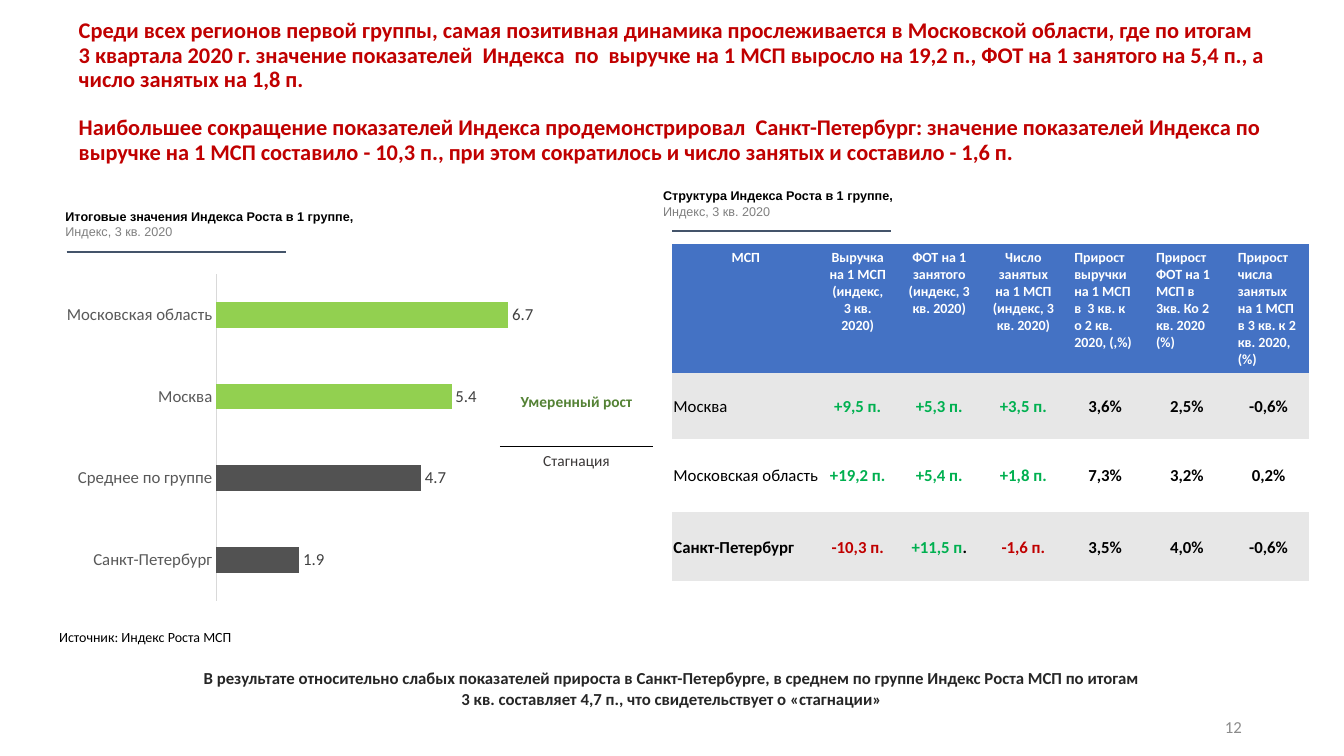
"""Build the slide on the Growth Index of the first group of regions."""
from dataclasses import dataclass
from lxml.etree import SubElement
from pptx import Presentation
from pptx.chart.data import CategoryChartData
from pptx.dml.color import RGBColor
from pptx.enum.chart import XL_CHART_TYPE, XL_LABEL_POSITION, XL_TICK_MARK
from pptx.enum.shapes import MSO_CONNECTOR
from pptx.enum.text import MSO_ANCHOR, PP_ALIGN
from pptx.oxml.ns import qn
from pptx.util import Cm, Pt

TITLE = [
    "Среди всех регионов первой группы, самая позитивная динамика прослеживается в Московской области, где по итогам 3 квартала 2020 г. значение показателей  Индекса  по  выручке на 1 МСП выросло на 19,2 п., ФОТ на 1 занятого на 5,4 п., а число занятых на 1,8 п.",
    "Наибольшее сокращение показателей Индекса продемонстрировал  Санкт-Петербург: значение показателей Индекса по выручке на 1 МСП составило - 10,3 п., при этом сократилось и число занятых и составило - 1,6 п.",
]
PERIOD = "Индекс, 3 кв. 2020"
HEADS = [
    ("Итоговые значения Индекса Роста в 1 группе,", (1.4, 5.13), (1.68, 6.35)),
    ("Структура Индекса Роста в 1 группе,", (16.46, 4.62), (16.94, 5.82)),
]
SCORES = {"Санкт-Петербург": 1.9, "Среднее по группе": 4.7,
          "Москва": 5.4, "Московская область": 6.7}
LEVELS = [("Умеренный рост", "rise"), ("Стагнация", "flat")]
COLUMNS = [
    "МСП", "Выручка на 1 МСП (индекс, 3 кв. 2020)",
    "ФОТ на 1 занятого (индекс, 3 кв. 2020)",
    "Число занятых на 1 МСП (индекс, 3 кв. 2020)",
    "Прирост  выручки на 1 МСП в  3 кв. к о 2 кв. 2020, (,%)",
    "Прирост  ФОТ на 1 МСП в 3кв. Ко 2 кв. 2020 (%)",
    "Прирост числа занятых на 1 МСП в 3 кв. к 2 кв. 2020, (%)",
]
REGIONS = [
    ("Москва", "+9,5 п.", "+5,3 п.", "+3,5 п.", "3,6%", "2,5%", "-0,6%"),
    ("Московская область", "+19,2 п.", "+5,4 п.", "+1,8 п.", "7,3%", "3,2%", "0,2%"),
    ("Санкт-Петербург", "-10,3 п.", "+11,5 п.", "-1,6 п.", "3,5%", "4,0%", "-0,6%"),
]
SOURCE = "Источник: Индекс Роста МСП"
RESULT = "В результате относительно слабых показателей прироста в Санкт-Петербурге, в среднем по группе Индекс Роста МСП по итогам 3 кв. составляет 4,7 п., что свидетельствует о «стагнации»"
PLAIN = "{2D5ABB26-0587-4C30-8999-92F81FD0307C}"
LEFT, MID, RIGHT = PP_ALIGN.LEFT, PP_ALIGN.CENTER, PP_ALIGN.RIGHT


@dataclass(frozen=True)
class Theme:
    """Colours and type styles (font, size, colour, bold)."""
    title = ("Calibri", 16, "C00000", True)
    head = ("Arial", 9, "000000", True)
    period = ("Arial", 9, "7F7F7F", False)
    label = ("Calibri", 12, "404040", False)
    axis = ("Calibri", 12, "595959", False)
    rise = ("Calibri", 11, "548235", True)
    flat = ("Calibri", 11, "3B3838", False)
    column = ("Calibri", 10, "FFFFFF", True)
    region = ("Calibri", 12, "000000", False)
    value = ("Calibri", 12, "000000", True)
    plus = ("Calibri", 12, "00B050", True)
    minus = ("Calibri", 12, "C00000", True)
    source = ("Calibri", 10, "000000", False)
    result = ("Calibri", 12, "262626", True)
    page = ("Calibri", 12, "8C8C8C", False)
    blue, band, white = "4472C4", "E7E7E7", "FFFFFF"
    rule, edge, axle = "44546A", "000000", "D9D9D9"
    high, low = "92D050", "525252"


LOOK = Theme()


def put(item, **vals):
    """Set each named value on an item."""
    for name, val in vals.items():
        setattr(item, name, val)


def paint(item, tone):
    """Give a shape, cell or bar a solid fill."""
    item.fill.solid()
    item.fill.fore_color.rgb = RGBColor.from_string(tone)


def style(font, look):
    """Apply a type style to a font."""
    name, size, tone, bold = look
    put(font, name=name, size=Pt(size), bold=bold)
    font.color.rgb = RGBColor.from_string(tone)


def write(frame, rows, align=LEFT, **form):
    """Fill a text frame, one paragraph for each list of runs."""
    frame.word_wrap = True
    for n, runs in enumerate(rows):
        para = frame.add_paragraph() if n else frame.paragraphs[0]
        put(para, alignment=align, **form)
        for text, look in runs:
            run = para.add_run()
            run.text = text
            style(run.font, look)


def add_text(slide, box, rows, align=LEFT, anchor=MSO_ANCHOR.TOP):
    """Add a text box."""
    frame = slide.shapes.add_textbox(*map(Cm, box)).text_frame
    frame.vertical_anchor = anchor
    write(frame, rows, align)


def add_rule(slide, x, y, span=5.52):
    """Add a thin rule below a heading."""
    rule = slide.shapes.add_connector(
        MSO_CONNECTOR.STRAIGHT, Cm(x), Cm(y), Cm(x + span), Cm(y))
    rule.line.color.rgb = RGBColor.from_string(LOOK.rule)
    rule.line.width = Pt(1)
    SubElement(rule._element.spPr, qn("a:effectLst"))


def add_grid(slide, x, y, cols, rows):
    """Add a table without style, sized by its columns and rows."""
    frame = slide.shapes.add_table(
        len(rows), len(cols), Cm(x), Cm(y), Cm(sum(cols)), Cm(sum(rows)))
    grid = frame.table
    put(grid, first_row=False, horz_banding=False)
    grid._tbl.tblPr.find(qn("a:tableStyleId")).text = PLAIN
    for col, wide in zip(grid.columns, cols):
        col.width = Cm(wide)
    for row, tall in zip(grid.rows, rows):
        row.height = Cm(tall)
    return grid


def add_bars(slide):
    """Add the bar chart of index scores."""
    data = CategoryChartData(number_format="0.0")
    data.categories = list(SCORES)
    data.add_series("Series 1", list(SCORES.values()))
    box = map(Cm, (1.4, 5.13, 13.51, 12.67))
    chart = slide.shapes.add_chart(XL_CHART_TYPE.BAR_CLUSTERED, *box, data).chart
    put(chart, has_legend=False, has_title=False)
    style(chart.font, LOOK.label)
    plot = chart.plots[0]
    put(plot, gap_width=219, vary_by_categories=False, has_data_labels=True)
    put(plot.data_labels, show_value=True, number_format="0.0",
        number_format_is_linked=False, position=XL_LABEL_POSITION.OUTSIDE_END)
    style(plot.data_labels.font, LOOK.label)
    for n, score in enumerate(SCORES.values()):
        paint(plot.series[0].points[n].format, LOOK.high if score > 5 else LOOK.low)
    put(chart.value_axis, visible=False, has_major_gridlines=False,
        minimum_scale=0, maximum_scale=8)
    axis = chart.category_axis
    put(axis, major_tick_mark=XL_TICK_MARK.NONE, has_major_gridlines=False)
    style(axis.tick_labels.font, LOOK.axis)
    axis.format.line.color.rgb = RGBColor.from_string(LOOK.axle)
    axis.format.line.width = Pt(0.75)
    area = chart._chartSpace.chart.plotArea
    for old in area.findall(qn("c:layout")):
        area.remove(old)
    place = SubElement(area, qn("c:layout"))
    area.insert(0, place)
    inner = SubElement(place, qn("c:manualLayout"))
    for tag, val in {"layoutTarget": "inner", "xMode": "edge", "yMode": "edge",
                     "x": 0.3, "y": 0.14, "w": 0.65, "h": 0.65}.items():
        SubElement(inner, qn("c:" + tag)).set("val", str(val))


def add_levels(slide):
    """Add the scale that parts growth from stagnation."""
    grid = add_grid(slide, 12.6, 9.78, [3.86], [1.47, 1.24])
    for n, (text, look) in enumerate(LEVELS):
        cell = grid.cell(n, 0)
        paint(cell, LOOK.white)
        write(cell.text_frame, [[(text, getattr(LOOK, look))]], MID)
    props = grid.cell(0, 0)._tc.get_or_add_tcPr()
    edge = props.makeelement(qn("a:lnB"), {"w": str(Pt(1))})
    props.insert(0, edge)
    tone = SubElement(SubElement(edge, qn("a:solidFill")), qn("a:srgbClr"))
    tone.set("val", LOOK.edge)


def add_regions(slide):
    """Add the table of index parts by region."""
    grid = add_grid(slide, 16.94, 6.15, [3.71, 1.93, 2.18] + [2.06] * 4,
                    [3.23, 1.65, 1.85, 1.75])
    for c, text in enumerate(COLUMNS):
        cell = grid.cell(0, c)
        paint(cell, LOOK.blue)
        write(cell.text_frame, [[(text, LOOK.column)]], MID if c < 4 else LEFT)
    for r, row in enumerate(REGIONS, 1):
        for c, text in enumerate(row):
            cell = grid.cell(r, c)
            paint(cell, LOOK.band if r % 2 else LOOK.white)
            put(cell, vertical_anchor=MSO_ANCHOR.MIDDLE, margin_left=Cm(0.03),
                margin_right=Cm(0.03), margin_top=Cm(0.03), margin_bottom=0)
            look = LOOK.value
            if c == 0 and r < len(REGIONS):
                look = LOOK.region
            elif 0 < c < 4:
                look = LOOK.plus if text.startswith("+") else LOOK.minus
            runs = [(text, look)]
            if text == "+11,5 п.":
                runs = [(text[:-1], look), (".", LOOK.value)]
            write(cell.text_frame, [runs], MID if c else LEFT)


def main():
    """Assemble and save the slide."""
    deck = Presentation()
    put(deck, slide_width=Cm(33.87), slide_height=Cm(19.05))
    slide = deck.slides.add_slide(deck.slide_layouts[5])
    title = slide.shapes.title
    put(title, left=Cm(1.73), top=Cm(0.79), width=Cm(30.43), height=Cm(3.68))
    put(title.text_frame, vertical_anchor=MSO_ANCHOR.MIDDLE, margin_bottom=Cm(0.74))
    write(title.text_frame, [[(text, LOOK.title)] for text in TITLE], line_spacing=0.9)
    title.text_frame.paragraphs[1].space_before = Pt(17.5)
    add_bars(slide)
    add_levels(slide)
    add_regions(slide)
    for text, spot, start in HEADS:
        add_text(slide, (*spot, 10.41, 1.02), [[(text, LOOK.head)], [(PERIOD, LOOK.period)]])
        add_rule(slide, *start)
    add_text(slide, (1.24, 15.72, 9.63, 0.69), [[(SOURCE, LOOK.source)]])
    add_text(slide, (4.8, 16.71, 24.26, 1.27), [[(RESULT, LOOK.result)]], MID)
    add_text(slide, (23.93, 17.81, 7.62, 1.02), [[("12", LOOK.page)]], RIGHT, MSO_ANCHOR.MIDDLE)
    deck.save("out.pptx")


if __name__ == "__main__":
    main()
